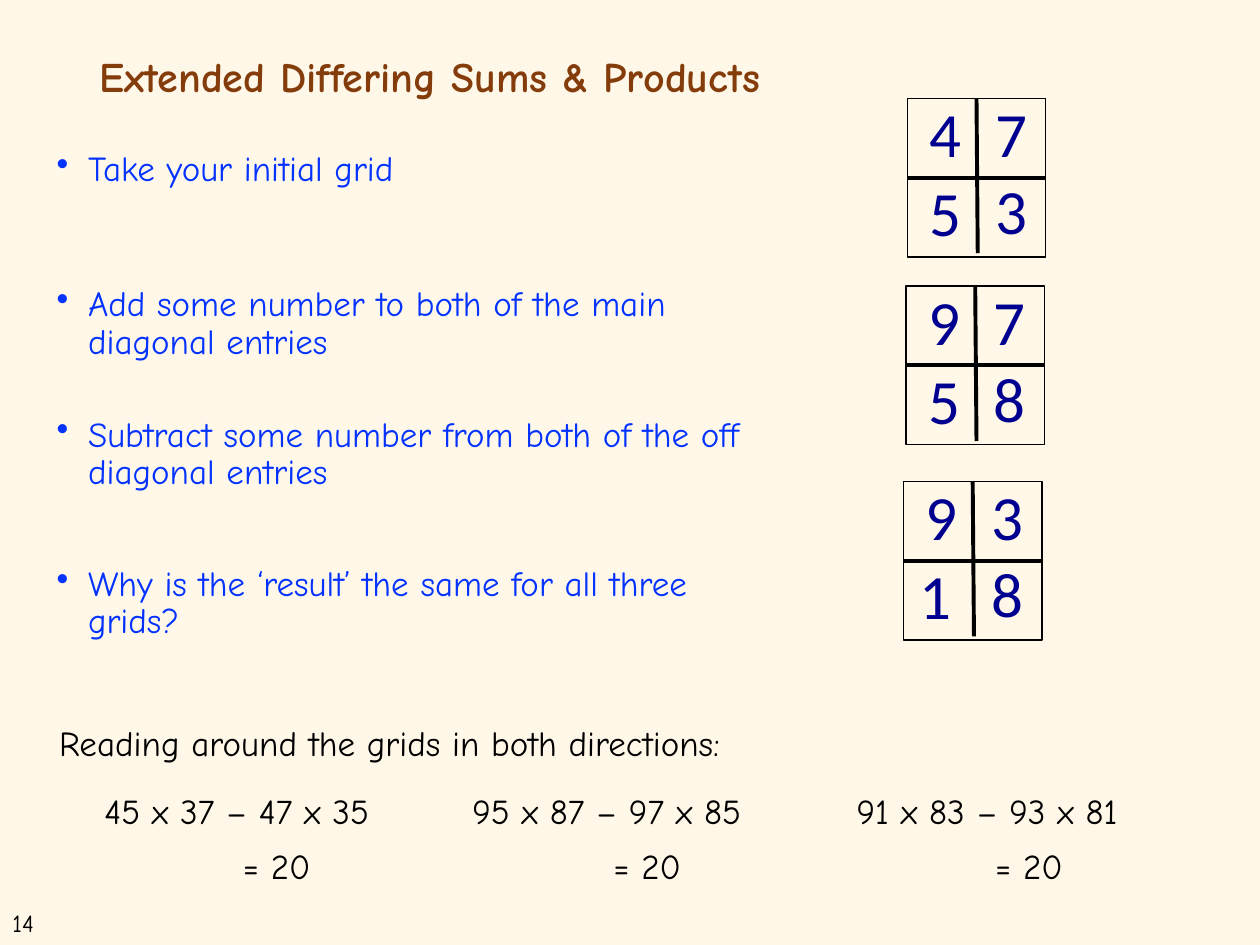
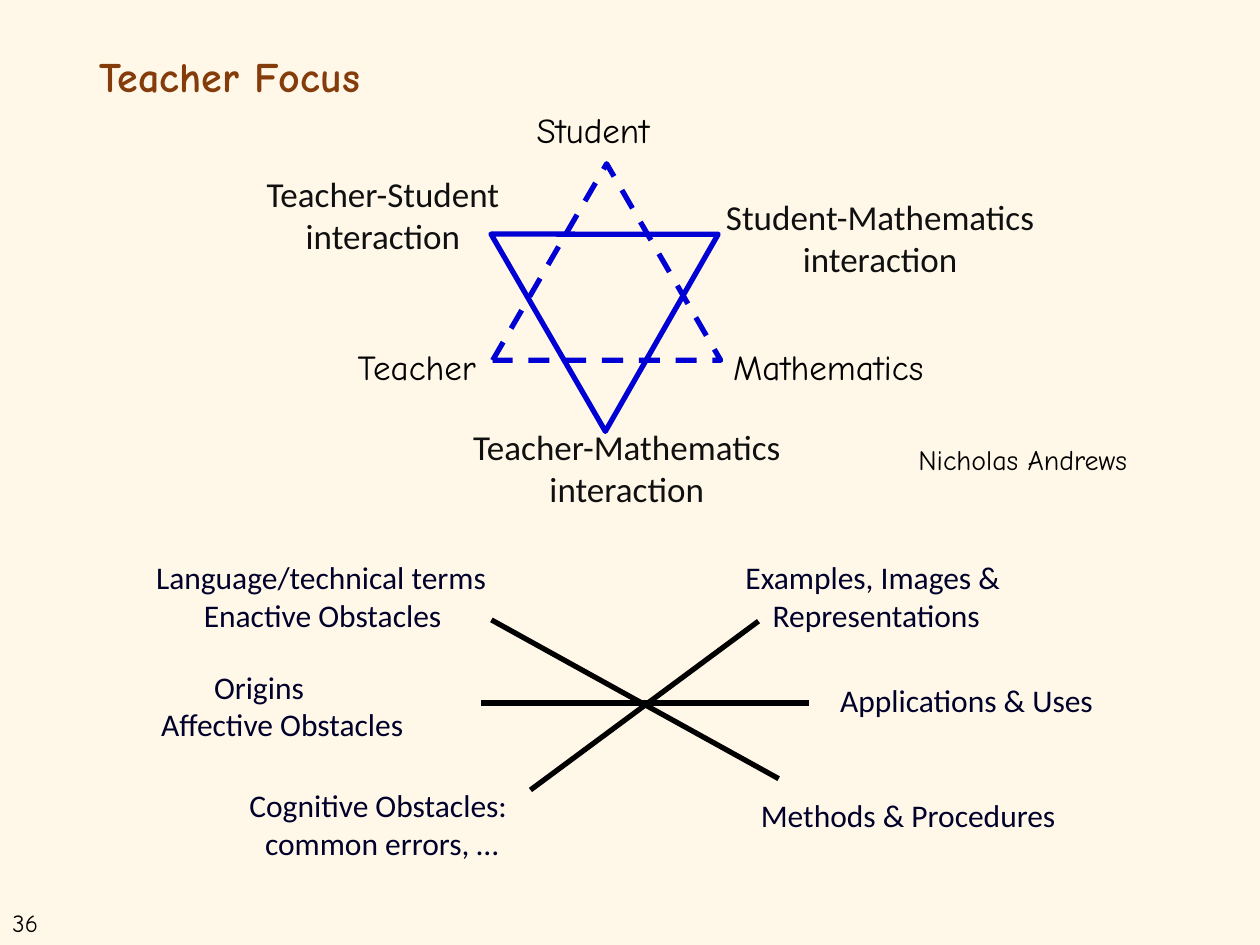
from dataclasses import dataclass
from typing import NamedTuple

from lxml import etree
from pptx import Presentation
from pptx.dml.color import RGBColor
from pptx.enum.dml import MSO_LINE
from pptx.enum.shapes import MSO_CONNECTOR, MSO_SHAPE
from pptx.enum.text import MSO_ANCHOR, MSO_AUTO_SIZE, PP_ALIGN
from pptx.oxml.ns import qn
from pptx.util import Inches, Pt

STRAIGHT = MSO_CONNECTOR.STRAIGHT
RECTANGLE = MSO_SHAPE.RECTANGLE
TRIANGLE = MSO_SHAPE.ISOSCELES_TRIANGLE
DASH = MSO_LINE.DASH
TOP = MSO_ANCHOR.TOP
FIT_SHAPE = MSO_AUTO_SIZE.SHAPE_TO_FIT_TEXT
NO_FIT = MSO_AUTO_SIZE.NONE
LEFT = PP_ALIGN.LEFT
CENTER = PP_ALIGN.CENTER

CREAM = RGBColor(0xFF, 0xF8, 0xE9)
BLACK = RGBColor(0x00, 0x00, 0x00)
BROWN = RGBColor(0x84, 0x3C, 0x0B)
BRIGHT_BLUE = RGBColor(0x04, 0x32, 0xFF)
NAVY = RGBColor(0x00, 0x00, 0x90)
STAR_BLUE = RGBColor(0x00, 0x00, 0xD5)
CHARCOAL = RGBColor(0x10, 0x10, 0x10)
INK = RGBColor(0x00, 0x00, 0x2A)


class Style(NamedTuple):
    font: str
    size: float
    color: RGBColor
    bold: bool = False


HAND = "Comic Neue"
PLAIN = "Calibri"
TITLE = Style(HAND, 24, BROWN, True)
NUMBER = Style(HAND, 14, BLACK)
BODY = Style(HAND, 20, BRIGHT_BLUE)
NOTE = Style(HAND, 20, BLACK)
CREDIT = Style(HAND, 16, BLACK)
DIGIT = Style(PLAIN, 36, NAVY)
INTERACTION = Style(PLAIN, 20, CHARCOAL)
ASPECT = Style(PLAIN, 18, INK)


@dataclass(frozen=True)
class Label:
    text: str
    x: float
    y: float
    w: float
    h: float
    style: Style
    align: PP_ALIGN = LEFT
    wrap: bool = False


@dataclass(frozen=True)
class Grid:
    x: float
    y: float
    digits: str
    lower_left_dx: float = 0.08


@dataclass(frozen=True)
class Calculation:
    text: str
    x: float
    w: float
    result_x: float


class Bullet(NamedTuple):
    text: str
    space_before: float


class Spoke(NamedTuple):
    x1: float
    y1: float
    x2: float
    y2: float


GRIDS = [
    Grid(7.2, 0.78, "4753"),
    Grid(7.19, 2.27, "9758"),
    Grid(7.17, 3.82, "9318", 0.03),
]
BULLETS = [
    Bullet("Take your initial grid", 0),
    Bullet("Add some number to both of the main diagonal entries", 55.5),
    Bullet("Subtract some number from both of the off diagonal entries", 31.5),
    Bullet("Why is the ‘result’ the same for all three grids?", 42),
]
CALCULATIONS = [
    Calculation("45 x 37 – 47 x 35", 0.73, 2.57, 1.83),
    Calculation("95 x 87 – 97 x 85", 3.65, 2.71, 4.77),
    Calculation("91 x 83 – 93 x 81", 6.7, 2.58, 7.8),
]
FOCUS_LABELS = [
    Label("Teacher-Student interaction", 1.86, 1.32, 2.36, 0.77, INTERACTION, CENTER, True),
    Label("Student-Mathematics interaction", 5.37, 1.5, 3.23, 0.77, INTERACTION, CENTER, True),
    Label("Teacher-Mathematics interaction", 3.36, 3.33, 3.23, 0.77, INTERACTION, CENTER, True),
    Label("Student", 4.16, 0.81, 1.21, 0.44, NOTE),
    Label("Teacher", 2.74, 2.69, 1.18, 0.44, NOTE),
    Label("Mathematics", 5.72, 2.69, 1.78, 0.44, NOTE),
    Label("Nicholas Andrews", 7.19, 3.46, 1.94, 0.37, CREDIT),
    Label("Language/technical terms", 1.14, 4.38, 3.15, 0.4, ASPECT),
    Label("Enactive Obstacles", 1.3, 4.68, 2.52, 0.4, ASPECT, CENTER, True),
    Label("Origins", 1.6, 5.25, 1.02, 0.4, ASPECT),
    Label("Affective Obstacles", 0.98, 5.55, 2.52, 0.4, ASPECT, CENTER, True),
    Label("Cognitive Obstacles: \ncommon errors, …", 1.77, 6.19, 2.52, 0.71, ASPECT, CENTER, True),
    Label("Examples, Images & \nRepresentations", 5.71, 4.38, 2.49, 0.71, ASPECT, CENTER),
    Label("Applications & Uses", 6.57, 5.36, 2.43, 0.4, ASPECT),
    Label("Methods & Procedures", 5.94, 6.27, 2.8, 0.4, ASPECT),
]
SPOKES = [
    Spoke(3.9, 4.92, 6.18, 6.18),
    Spoke(4.21, 6.27, 6.02, 4.93),
    Spoke(3.82, 5.58, 6.42, 5.58),
]


def style_paragraph(p, style: Style) -> None:
    p.font.name = style.font
    p.font.size = Pt(style.size)
    p.font.color.rgb = style.color
    p.font.bold = style.bold


def add_label(s, label: Label):
    sp = s.shapes.add_textbox(
        Inches(label.x), Inches(label.y), Inches(label.w), Inches(label.h))
    tf = sp.text_frame
    tf.text = label.text
    tf.word_wrap = label.wrap
    tf.auto_size = FIT_SHAPE
    tf.vertical_anchor = TOP
    for p in tf.paragraphs:
        p.alignment = label.align
        style_paragraph(p, label.style)
    return sp


def add_outline(s, kind, x: float, y: float, w: float, h: float,
                color: RGBColor, width: float):
    sp = s.shapes.add_shape(kind, Inches(x), Inches(y), Inches(w), Inches(h))
    sp.shadow.inherit = False
    sp.fill.background()
    sp.line.color.rgb = color
    sp.line.width = Pt(width)
    return sp


def add_line(s, x1: float, y1: float, x2: float, y2: float, width: float):
    line = s.shapes.add_connector(
        STRAIGHT, Inches(x1), Inches(y1), Inches(x2), Inches(y2))
    line.line.color.rgb = BLACK
    line.line.width = Pt(width)
    etree.SubElement(line._element.spPr, qn("a:effectLst"))
    return line


def add_titled_slide(prs, title: str, number: int):
    s = prs.slides.add_slide(prs.slide_layouts[6])
    add_label(s, Label(str(number), 0, 7.16, 0.51, 0.34, NUMBER))
    sp = add_label(s, Label(title, 0.69, 0.4, 8.62, 0.71, TITLE, wrap=True))
    sp.text_frame.auto_size = NO_FIT
    sp.text_frame.paragraphs[0].line_spacing = 0.9
    return s


def add_bullets(s, bullets: list[Bullet]) -> None:
    text = "\n".join(bullet.text for bullet in bullets)
    sp = add_label(s, Label(text, 0.35, 1.15, 5.91, 4.38, BODY, wrap=True))
    tf = sp.text_frame
    tf.auto_size = NO_FIT
    for p, bullet in zip(tf.paragraphs, bullets):
        p.line_spacing = 0.9
        p.space_before = Pt(bullet.space_before)
        pPr = p._p.get_or_add_pPr()
        pPr.set("marL", str(Inches(0.25)))
        pPr.set("indent", str(Inches(-0.25)))
        mark = etree.Element(qn("a:buChar"), char="•")
        pPr.find(qn("a:defRPr")).addprevious(mark)


def add_grid(s, grid: Grid) -> None:
    w, h = 1.1, 1.26
    x, y = grid.x, grid.y
    offsets = [(0.08, -0.08), (0.6, -0.08), (grid.lower_left_dx, 0.55), (0.6, 0.53)]
    for digit, (dx, dy) in zip(grid.digits, offsets):
        add_label(s, Label(digit, x + dx, y + dy, 0.49, 0.71, DIGIT))
    frame = add_outline(s, RECTANGLE, x, y, w, h, BLACK, 0.75)
    across = add_line(s, x + w, y + h / 2, x, y + h / 2, 2.25)
    across.begin_connect(frame, 3)
    across.end_connect(frame, 1)
    down = add_line(s, x + 0.56, y + 1.23, x + w / 2, y, 2.25)
    down.end_connect(frame, 0)


def build_sums_slide(prs) -> None:
    s = add_titled_slide(prs, "Extended Differing Sums & Products", 14)
    add_bullets(s, BULLETS)
    for grid in GRIDS:
        add_grid(s, grid)
    add_label(s, Label("Reading around the grids in both directions:",
                       0.37, 5.68, 5.82, 0.44, NOTE))
    for calc in CALCULATIONS:
        add_label(s, Label(calc.text, calc.x, 6.22, calc.w, 0.44, NOTE))
        add_label(s, Label("= 20", calc.result_x, 6.65, 0.76, 0.44, NOTE))


def build_focus_slide(prs) -> None:
    s = add_titled_slide(prs, "Teacher Focus", 36)
    people = add_outline(s, TRIANGLE, 3.91, 1.3, 1.81, 1.56, STAR_BLUE, 3)
    people.line.dash_style = DASH
    interactions = add_outline(s, TRIANGLE, 4.12, 1.47, 1.81, 1.56, STAR_BLUE, 3)
    interactions.rotation = 59.9
    for spoke in SPOKES:
        add_line(s, *spoke, width=3)
    for label in FOCUS_LABELS:
        add_label(s, label)


def main() -> None:
    prs = Presentation()
    prs.slide_width = Inches(10)
    prs.slide_height = Inches(7.5)
    fill = prs.slide_master.background.fill
    fill.solid()
    fill.fore_color.rgb = CREAM
    build_sums_slide(prs)
    build_focus_slide(prs)
    prs.save("out.pptx")


if __name__ == "__main__":
    main()
